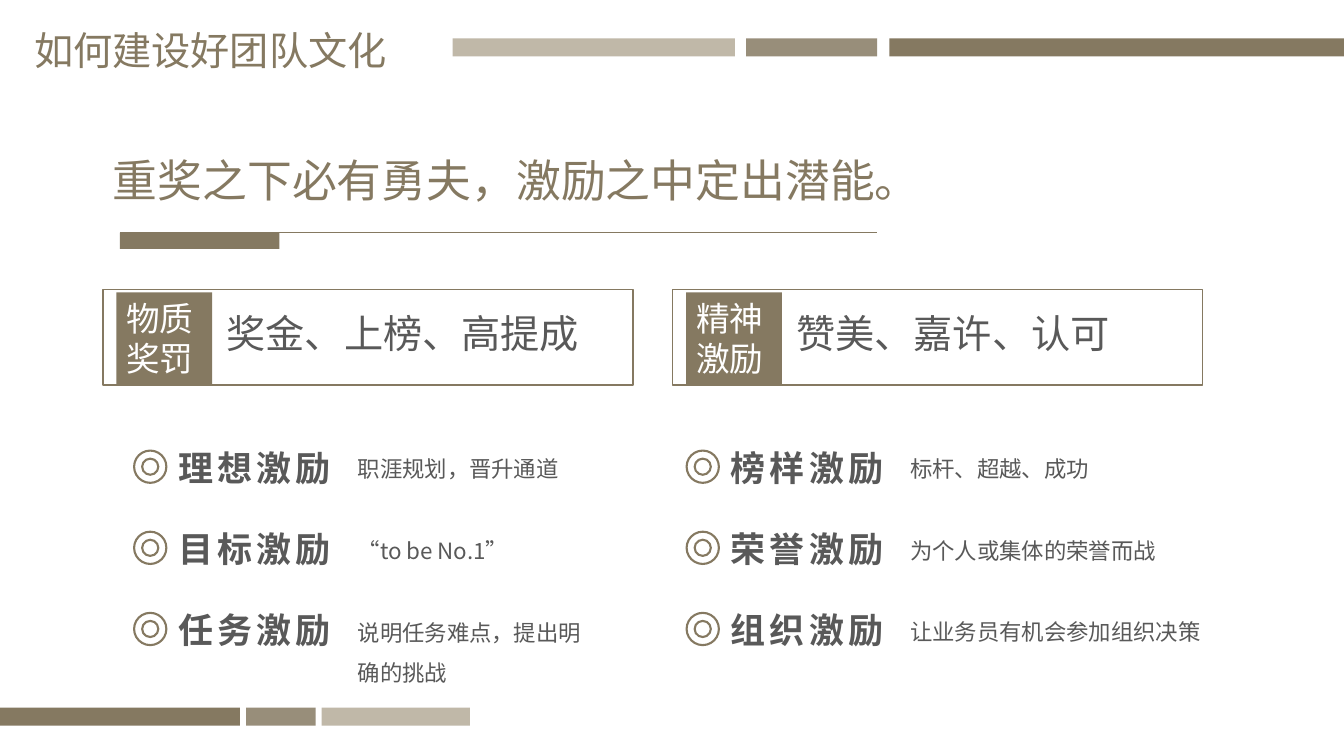
from pptx import Presentation, util as u
from pptx.dml.color import RGBColor
from pptx.enum import shapes, text
from pptx.oxml.ns import qn
from lxml import etree

FONT = "Noto Sans CJK SC"
BROWN, BEIGE, GREY, WHITE = "857961", "C0B8A8", "595959", "FFFFFF"

deck = Presentation()
deck.slide_width, deck.slide_height = u.Inches(13.33), u.Inches(7.5)
slide = deck.slides.add_slide(deck.slide_layouts[6])


def block(box, fill=None, line=None, weight=1, alpha=None, kind="RECTANGLE"):
    """Draw a preset shape; box is left, top, width, height in inches."""
    shape = slide.shapes.add_shape(shapes.MSO_SHAPE[kind], *map(u.Inches, box))
    shape.shadow.inherit = False
    if fill:
        shape.fill.solid()
        shape.fill.fore_color.rgb = RGBColor.from_string(fill)
    else:
        shape.fill.background()
    if line:
        shape.line.color.rgb = RGBColor.from_string(line)
        shape.line.width = u.Pt(weight)
    else:
        shape.line.fill.background()
    if alpha:
        color = shape.fill._xPr.find(".//" + qn("a:srgbClr"))
        etree.SubElement(color, qn("a:alpha"), val=str(alpha * 1000))
    return shape


def write(words, size, color, box=None, shape=None, bold=False, spacing=0, lines=None):
    """Put left-aligned words in a new text box or in a given shape."""
    holder = shape or slide.shapes.add_textbox(*map(u.Inches, box))
    frame = holder.text_frame
    frame.word_wrap = True
    frame.text = words
    for paragraph in frame.paragraphs:
        paragraph.alignment = text.PP_ALIGN.LEFT
        paragraph.line_spacing = lines
        for run in paragraph.runs:
            run.font.size, run.font.name = u.Pt(size), FONT
            run.font.bold = bold
            run.font.color.rgb = RGBColor.from_string(color)
            props = run._r.get_or_add_rPr()
            props.set("lang", "zh-CN")
            if spacing:
                props.set("spc", str(spacing * 100))
            etree.SubElement(props, qn("a:ea"), typeface=FONT)


# Bars at the top right and bottom left
for top, bars in ((0.38, ((8.82, 4.52), (7.4, 1.3), (4.49, 2.8))),
                  (7.02, ((0, 2.38), (2.44, 0.69), (3.19, 1.47)))):
    for (left, width), fill, alpha in zip(bars, (BROWN, BROWN, BEIGE), (None, 84, None)):
        block((left, top, width, 0.18), fill, alpha=alpha)

# Title and slogan with its underline
write("如何建设好团队文化", 28, BROWN, (0.24, 0.21, 4, 0.57))
write("重奖之下必有勇夫，激励之中定出潜能。", 32, BROWN, (1.02, 1.47, 8.28, 0.64))
underline = slide.shapes.add_connector(
    shapes.MSO_CONNECTOR.STRAIGHT, *map(u.Inches, (1.19, 2.31, 8.7, 2.31)))
underline.line.color.rgb = RGBColor.from_string(BROWN)
underline.line.width = u.Pt(0.5)
etree.SubElement(underline._element.spPr, qn("a:effectLst"))
block((1.19, 2.31, 1.58, 0.16), BROWN)

# Two framed headings
for left, label, summary in ((1.02, "物质\n奖罚", "奖金、上榜、高提成"),
                             (6.67, "精神激励", "赞美、嘉许、认可")):
    block((left, 2.87, 5.26, 0.95), line=BROWN)
    tag = block((left + 0.135, 2.9, 0.95, 0.91), BROWN)
    tag.text_frame.vertical_anchor = text.MSO_ANCHOR.MIDDLE
    write(label, 24, WHITE, shape=tag)
    write(summary, 28, GREY, (left + 1.13, 3.02, 3.94, 0.57))

# Incentives: two columns of three, each with ring, name and detail
ROW_TOP, ROW_STEP = 4.47, 0.805
columns = (
    (1.33, 2.44, (("理想激励", "职涯规划，晋升通道"),
                  ("目标激励", "“to be No.1”"),
                  ("任务激励", "说明任务难点，提出明确的挑战"))),
    (6.81, 3.16, (("榜样激励", "标杆、超越、成功"),
                  ("荣誉激励", "为个人或集体的荣誉而战"),
                  ("组织激励", "让业务员有机会参加组织决策"))),
)
for left, detail_width, incentives in columns:
    for row, (name, detail) in enumerate(incentives):
        top = ROW_TOP + row * ROW_STEP
        two_lines = name == "任务激励"
        block((left, top, 0.32, 0.32), WHITE, BROWN, 1.5, kind="DONUT")
        write(detail, 16, GREY,
              (left + 2.12, top - 0.12 * two_lines, detail_width, 0.86 if two_lines else 0.37),
              lines=1.5 if two_lines else None)
        write(name, 25, GREY, (left + 0.34, top - 0.09, 2.13, 0.52), bold=True, spacing=3)

deck.save("out.pptx")
